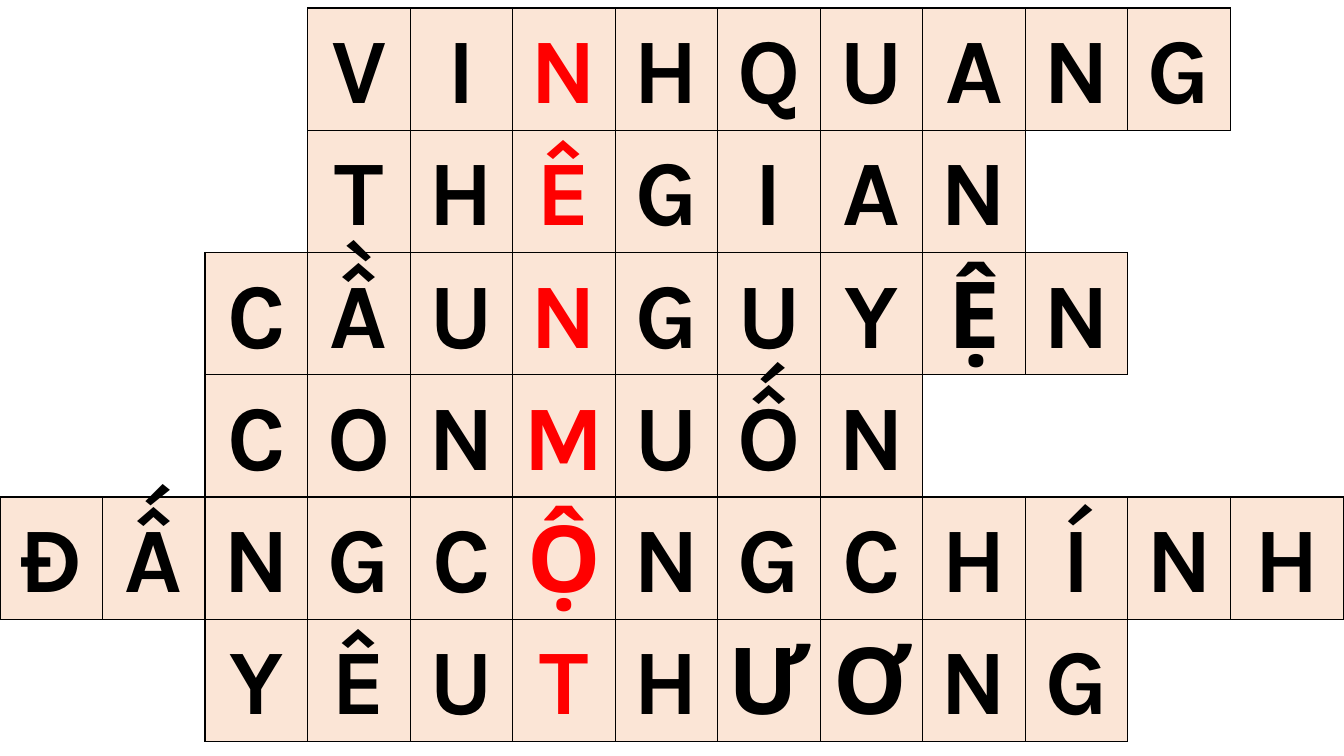
from dataclasses import dataclass

from lxml import etree
from pptx import Presentation
from pptx.dml.color import RGBColor
from pptx.enum.text import MSO_ANCHOR, PP_ALIGN
from pptx.oxml.ns import qn
from pptx.util import Cm, Pt

MIDDLE = MSO_ANCHOR.MIDDLE
CENTER = PP_ALIGN.CENTER

SLIDE_WIDTH, SLIDE_HEIGHT = 33.87, 19.05
TABLE_TOP, TABLE_HEIGHT = 0.2, 18.49
COLUMN_COUNT, LAST_COLUMN_WIDTH = 13, 2.85
KEY_COLUMN = 5
ANSWERS = [
    (3, "VINHQUANG"),
    (3, "THÊGIAN"),
    (2, "CẦUNGUYỆN"),
    (2, "CONMUỐN"),
    (0, "ĐẤNGCỘNGCHÍNH"),
    (2, "YÊUTHƯƠNG"),
]
EDGES = [("a:lnL", 0, -1), ("a:lnR", 0, 1), ("a:lnT", -1, 0), ("a:lnB", 1, 0)]


@dataclass(frozen=True)
class Theme:
    """Colours, font and sizes of the crossword."""

    font: str = "Karla"
    letter_size: float = 66
    line_width: float = 1
    letter: str = "000000"
    key_letter: str = "FF0000"
    box: str = "FBE5D6"
    empty: str = "FFFFFF"
    line: str = "000000"


class CrosswordSlide:
    """Draws a crossword on one slide in the given theme."""

    def __init__(self, slide, theme):
        self.slide = slide
        self.theme = theme

    def add_crossword(self, answers):
        """Add the table and place every answer in its row."""
        letters = {
            (row, start + offset): letter
            for row, (start, answer) in enumerate(answers)
            for offset, letter in enumerate(answer)
        }
        frame = self.slide.shapes.add_table(
            len(answers), COLUMN_COUNT,
            Cm(0), Cm(TABLE_TOP), Cm(SLIDE_WIDTH), Cm(TABLE_HEIGHT),
        )
        table = frame.table
        table.first_row = False
        table.horz_banding = False
        column_width = (SLIDE_WIDTH - LAST_COLUMN_WIDTH) / (COLUMN_COUNT - 1)
        for column in table.columns:
            column.width = Cm(column_width)
        table.columns[COLUMN_COUNT - 1].width = Cm(LAST_COLUMN_WIDTH)
        for table_row in table.rows:
            table_row.height = Cm(TABLE_HEIGHT / len(answers))
        for row in range(len(answers)):
            for column in range(COLUMN_COUNT):
                cell = table.cell(row, column)
                letter = letters.get((row, column))
                self.fill_cell(cell, self.theme.box if letter else self.theme.empty)
                self.add_borders(cell, row, column, letters)
                if letter:
                    self.add_letter(cell, letter, column == KEY_COLUMN)

    def fill_cell(self, cell, color):
        """Fill a cell with one colour."""
        cell.fill.solid()
        cell.fill.fore_color.rgb = RGBColor.from_string(color)

    def add_borders(self, cell, row, column, letters):
        """Draw each edge that touches a letter and clear the others."""
        properties = cell._tc.get_or_add_tcPr()
        for position, (tag, row_step, column_step) in enumerate(EDGES):
            border = etree.Element(qn(tag), w=str(Pt(self.theme.line_width)))
            neighbour = (row + row_step, column + column_step)
            if (row, column) in letters or neighbour in letters:
                fill = etree.SubElement(border, qn("a:solidFill"))
                etree.SubElement(fill, qn("a:srgbClr"), val=self.theme.line)
            else:
                etree.SubElement(border, qn("a:noFill"))
            properties.insert(position, border)

    def add_letter(self, cell, letter, is_key):
        """Write one centred letter in a cell."""
        cell.vertical_anchor = MIDDLE
        cell.margin_left = cell.margin_right = Cm(0.18)
        cell.margin_top = cell.margin_bottom = Cm(0)
        paragraph = cell.text_frame.paragraphs[0]
        paragraph.alignment = CENTER
        paragraph.line_spacing = 1.07
        paragraph.space_after = Pt(8)
        run = paragraph.add_run()
        run.text = letter
        run.font.name = self.theme.font
        run.font.size = Pt(self.theme.letter_size)
        run.font.bold = True
        color = self.theme.key_letter if is_key else self.theme.letter
        run.font.color.rgb = RGBColor.from_string(color)


def main():
    """Build and save the crossword presentation."""
    presentation = Presentation()
    presentation.slide_width = Cm(SLIDE_WIDTH)
    presentation.slide_height = Cm(SLIDE_HEIGHT)
    slide = presentation.slides.add_slide(presentation.slide_layouts[6])
    CrosswordSlide(slide, Theme()).add_crossword(ANSWERS)
    presentation.save("out.pptx")


if __name__ == "__main__":
    main()
